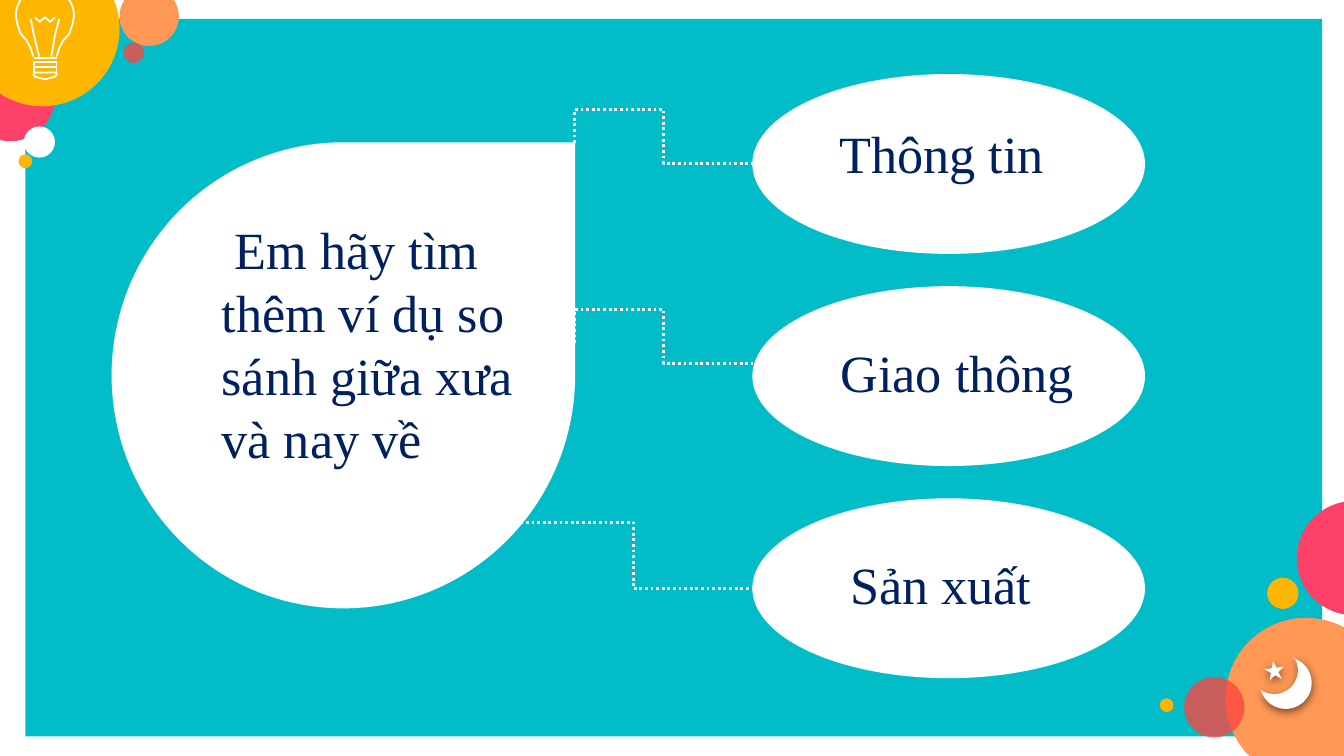
from math import cos, sin, radians
from lxml import etree
from pptx import Presentation
from pptx.dml.color import RGBColor as RGB
from pptx.enum.dml import MSO_LINE as Dash
from pptx.enum.shapes import MSO_CONNECTOR as Link, MSO_SHAPE as Kind
from pptx.oxml import parse_xml
from pptx.oxml.ns import nsdecls, qn
from pptx.util import Cm, Pt

WHITE, TEAL, GOLD = "FFFFFF", "02BDC7", "FFB600"
PINK, PEACH, RED, NAVY = "FC4067", "FF9755", "FC4540", "002060"


def paint(item, fill=None, line=None):
    item.shadow.inherit = False
    if fill:
        item.fill.solid()
        item.fill.fore_color.rgb = RGB.from_string(fill)
    else:
        item.fill.background()
    if line:
        item.line.color.rgb = RGB.from_string(line)
        item.line.width = Pt(0.96)
    else:
        item.line.fill.background()
    return item


def trace(points, close=False):
    spots = [(Cm(x), Cm(y)) for x, y in points]
    pen = shapes.build_freeform(*spots[0])
    pen.add_line_segments(spots[1:], close=close)
    return pen.convert_to_shape()


deck = Presentation()
deck.slide_width, deck.slide_height = Cm(25.4), Cm(14.29)
slide = deck.slides.add_slide(deck.slide_layouts[6])
shapes = slide.shapes

paint(shapes.add_shape(Kind.RECTANGLE, Cm(0.48), Cm(0.36), Cm(24.51), Cm(13.56)), TEAL)

dots = [
    (-0.64, 0.99, 1.68, PINK), (-0.66, -0.91, 2.92, GOLD),
    (2.26, -0.25, 1.12, PEACH), (2.34, 0.81, 0.38, RED),
    (0.45, 2.39, 0.59, WHITE), (23.16, 11.68, 3.05, PEACH),
    (24.51, 9.47, 2.16, PINK), (22.38, 12.8, 1.14, RED),
    (23.95, 10.92, 0.59, GOLD), (21.92, 13.2, 0.26, GOLD),
    (0.35, 2.92, 0.26, GOLD),
]
for x, y, size, tint in dots:
    dot = paint(shapes.add_shape(Kind.OVAL, Cm(x), Cm(y), Cm(size), Cm(size)), tint)
    if tint == RED:
        clear = dot.fill._xPr.find(".//" + qn("a:srgbClr"))
        etree.SubElement(clear, qn("a:alpha"), val="79000")

mid = 0.85
neck = [(0.22, 1.07), (0.27, 0.91), (0.35, 0.76), (0.46, 0.64), (0.52, 0.46)]
dome = [(mid + 0.55 * cos(radians(a)), 0.3 - 0.55 * sin(radians(a)))
        for a in range(0, 181, 10)]
glass = ([(mid + x, y) for x, y in neck] + dome
         + [(mid - x, y) for x, y in reversed(neck)])
bulb = [
    (glass, False),
    ([(0.74, 1.07), (0.64, 0.66), (0.58, 0.36)], False),
    ([(0.97, 1.07), (1.04, 0.66), (1.12, 0.36)], False),
    ([(0.66, 0.33), (0.75, 0.41), (0.85, 0.33), (0.95, 0.41), (1.04, 0.33)], False),
    ([(0.64, 1.09), (1.07, 1.09)], False),
    ([(0.64, 1.37), (0.64, 1.42), (0.66, 1.45), (0.85, 1.5),
      (1.04, 1.45), (1.07, 1.42), (1.07, 1.37)], True),
]
for y in (1.17, 1.27):
    bulb.append(([(0.64, y), (1.07, y), (1.07, y + 0.1), (0.64, y + 0.1)], True))
for points, close in bulb:
    paint(trace(points, close), line=WHITE)

star = shapes.add_shape(Kind.STAR_5_POINT, Cm(23.9), Cm(12.49), Cm(0.37), Cm(0.36))
star.rotation = -8
rim = [(24.3 + 0.49 * cos(radians(a)), 12.91 + 0.49 * sin(radians(a)))
       for a in range(-75, 166, 8)]
bite = [(24.08 + 0.45 * cos(radians(a)), 12.67 + 0.45 * sin(radians(a)))
        for a in range(125, -36, -8)]
for item in (star, trace(rim + bite, True)):
    paint(item, WHITE)
    glow = item._element.spPr.find(qn("a:effectLst"))
    glow.append(parse_xml(
        f'<a:outerShdw {nsdecls("a")} blurRad="{Pt(4.5)}" dist="{Pt(1.5)}" dir="5400000">'
        '<a:srgbClr val="000000"><a:alpha val="50000"/></a:srgbClr></a:outerShdw>'))

paint(shapes.add_shape(Kind.TEAR, Cm(2.11), Cm(2.69), Cm(8.76), Cm(8.81)), WHITE)
for row in range(3):
    paint(shapes.add_shape(Kind.OVAL, Cm(14.22), Cm(1.4 + 4.01 * row),
                           Cm(7.42), Cm(3.4)), WHITE)

links = [
    (12.74, 1.22, 12.35, 4.58, True),
    (12.74, 5, 12.35, 8.36, True),
    (9.73, 9.88, 14.22, 11.13, False),
]
for x, y, right, low, turn in links:
    link = shapes.add_connector(Link.ELBOW, Cm(x), Cm(y), Cm(right), Cm(low))
    link.line.color.rgb = RGB.from_string(WHITE)
    link.line.width = Pt(1.5)
    link.line.dash_style = Dash.ROUND_DOT
    frame = link._element.spPr
    etree.SubElement(frame, qn("a:effectLst"))
    if turn:
        frame.find(qn("a:xfrm")).set("rot", "16200000")
        form = frame.find(qn("a:prstGeom"))
        form.set("prst", "bentConnector4")
        bends = form.find(qn("a:avLst"))
        for name, value in (("adj1", -162100), ("adj2", 50000)):
            etree.SubElement(bends, qn("a:gd"), name=name, fmla=f"val {value}")

notes = [
    (3.94, 3.99, 5.05, " Em hãy tìm thêm ví dụ so sánh giữa xưa và nay về"),
    (15.39, 2.16, 1.45, " Thông tin"),
    (15.39, 6.3, 1.45, " Giao thông"),
    (15.57, 10.31, 1.45, " Sản xuất"),
]
for x, y, high, words in notes:
    text = shapes.add_textbox(Cm(x), Cm(y), Cm(6.27), Cm(high)).text_frame
    text.word_wrap = True
    text.text = words
    font = text.paragraphs[0].runs[0].font
    font.name, font.size = "Times New Roman", Pt(28)
    font.color.rgb = RGB.from_string(NAVY)

deck.save("out.pptx")
